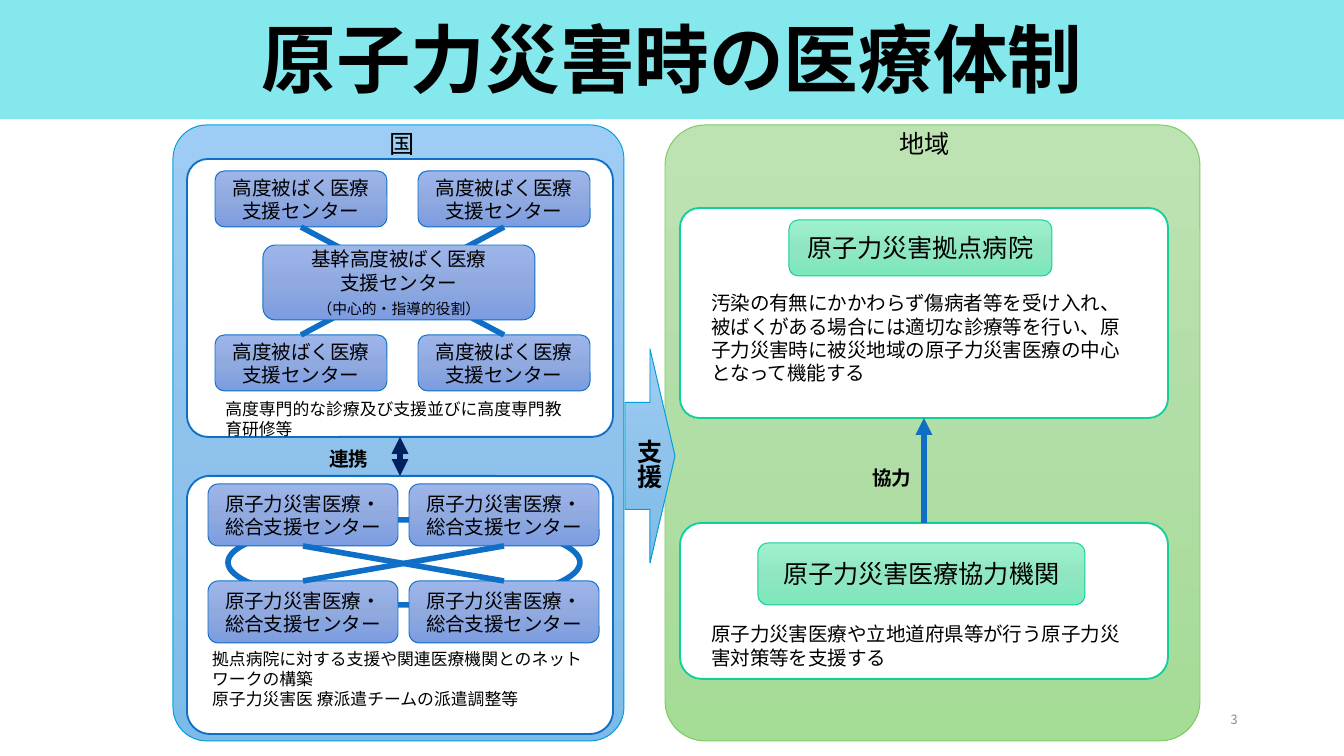
from copy import deepcopy
from itertools import product

from lxml import etree
from pptx import Presentation
from pptx.dml.color import RGBColor
from pptx.enum.shapes import MSO_CONNECTOR, MSO_SHAPE
from pptx.enum.text import MSO_ANCHOR, MSO_AUTO_SIZE, PP_ALIGN
from pptx.oxml.ns import qn
from pptx.util import Emu, Pt

RECT = MSO_SHAPE.RECTANGLE
ROUND = MSO_SHAPE.ROUNDED_RECTANGLE
OVAL = MSO_SHAPE.OVAL
ARROW = MSO_SHAPE.RIGHT_ARROW
STRAIGHT = MSO_CONNECTOR.STRAIGHT
MIDDLE = MSO_ANCHOR.MIDDLE
LEFT, CENTER, RIGHT = PP_ALIGN.LEFT, PP_ALIGN.CENTER, PP_ALIGN.RIGHT
TOP, BOTTOM = 0, 2

FONT = "Noto Sans CJK JP"
LINE_RATIO = 1.19
BLUE, SKY, GREEN, MINT, NAVY = "0F6FC6", "009DD9", "7CCA62", "10CF9B", "002060"
SKY_FILL = ("9DCDF4", "90C3EC", "7CBBE9")
GREEN_FILL = ("BDE3B3", "B1DDA6", "A5DC96")
BLUE_FILL = ("9EB5EA", "90AAE0", "7C9CE1")
MINT_FILL = ("9EF1CD", "91E6C2", "7CE8BC")


def px(n):
    return Emu(round(n * 914400 / 134.4))


def color(hex_code):
    return RGBColor.from_string(hex_code)


def format_run(r, size, bold=False, ink="000000"):
    for name, value in {"name": FONT, "size": Pt(size), "bold": bold}.items():
        setattr(r.font, name, value)
    r.font.color.rgb = color(ink)
    ea = etree.SubElement(r.font._element, qn("a:ea"))
    ea.set("typeface", FONT)


def write(tf, lines, size, align=LEFT, spacing=None, **run_format):
    for i, line in enumerate(lines):
        p = tf.add_paragraph() if i else tf.paragraphs[0]
        p.alignment = align
        p.line_spacing = spacing or Pt(round(size * LINE_RATIO, 1))
        r = p.add_run()
        r.text = line
        format_run(r, size, **run_format)


def fill_gradient(sp, stops):
    sp.fill.gradient()
    sp.fill.gradient_angle = 270
    gs_list = sp._element.spPr.find(".//" + qn("a:gsLst"))
    gs_list.insert(1, deepcopy(gs_list[0]))
    for stop, position, hex_code in zip(sp.fill.gradient_stops, (0, 0.5, 1), stops):
        stop.color.rgb = color(hex_code)
        stop.position = position


def add_shape(s, kind, box, fill=None, line=None, width=0.5, adj=None):
    sp = s.shapes.add_shape(kind, *map(px, box))
    sp.shadow.inherit = False
    if isinstance(fill, tuple):
        fill_gradient(sp, fill)
    elif fill:
        sp.fill.solid()
        sp.fill.fore_color.rgb = color(fill)
    else:
        sp.fill.background()
    if line:
        sp.line.color.rgb = color(line)
        sp.line.width = Pt(width)
    else:
        sp.line.fill.background()
    if adj:
        sp.adjustments[0] = adj
    return sp


def add_panel(s, box, line, adj):
    return add_shape(s, ROUND, box, "FFFFFF", line, 1, adj)


def add_label(s, box, lines, fill=BLUE_FILL, line=BLUE, size=10.5):
    sp = add_shape(s, ROUND, box, fill, line)
    sp.text_frame.vertical_anchor = MIDDLE
    write(sp.text_frame, lines, size, CENTER)
    return sp


def add_label_grid(s, xs, ys, size, lines):
    return [add_label(s, (x, y, *size), lines) for y, x in product(ys, xs)]


def add_text(s, box, lines, size, wrap=True, **text_format):
    tf = s.shapes.add_textbox(*map(px, box)).text_frame
    tf.word_wrap = wrap
    write(tf, lines, size, **text_format)
    return tf


def join(s, start, start_side, end, end_side, line=BLUE, ends=()):
    c = s.shapes.add_connector(STRAIGHT, 0, 0, 0, 0)
    c.begin_connect(start, start_side)
    c.end_connect(end, end_side)
    c.line.color.rgb = color(line)
    c.line.width = Pt(3)
    ln = c.line._get_or_add_ln()
    for end_name in ends:
        etree.SubElement(ln, qn(f"a:{end_name}")).set("type", "triangle")
    etree.SubElement(c._element.spPr, qn("a:effectLst"))


def cross(s, labels):
    upper_left, upper_right, lower_left, lower_right = labels
    join(s, upper_right, BOTTOM, lower_left, TOP)
    join(s, upper_left, BOTTOM, lower_right, TOP)


def add_title(s):
    band = add_shape(s, RECT, (0, 0, 1344, 119), "85E8EC")
    s.shapes._spTree.insert(2, band._element)
    title = s.shapes.title
    title.left, title.top, title.width, title.height = map(px, (93, 20, 1158, 86))
    tf = title.text_frame
    tf.auto_size = MSO_AUTO_SIZE.NONE
    tf.vertical_anchor = MIDDLE
    write(tf, ["原子力災害時の医療体制"], 40, CENTER, 0.9, bold=True)


def add_nation(s):
    add_shape(s, ROUND, (173, 125, 451, 616), SKY_FILL, SKY, adj=0.075)
    advanced = add_panel(s, (187, 159, 426, 278), BLUE, 0.075)
    centers = add_label_grid(s, (215, 418), (171, 335), (172, 56),
                             ["高度被ばく医療", "支援センター"])
    cross(s, centers)
    core = add_label(s, (263, 245, 272, 75), ["基幹高度被ばく医療", "支援センター"])
    p = core.text_frame.paragraphs[-1]
    p.add_line_break()
    r = p.add_run()
    r.text = "（中心的・指導的役割）"
    format_run(r, 7.9)
    add_text(s, (212, 392, 375, 54),
             ["高度専門的な診療及び支援並びに高度専門教育研修等"], 9)

    general = add_panel(s, (187, 476, 426, 258), BLUE, 0.089)
    add_shape(s, OVAL, (228, 520, 352, 85), line=BLUE, width=3)
    cross(s, add_label_grid(s, (208, 409), (484, 581), (190, 62),
                            ["原子力災害医療・", "総合支援センター"]))
    add_text(s, (199, 642, 401, 75),
             ["拠点病院に対する支援や関連医療機関とのネットワークの構築",
              "原子力災害医 療派遣チームの派遣調整等"], 9)
    add_text(s, (376, 122, 52, 44), ["国"], 13.5, wrap=False)
    join(s, advanced, BOTTOM, general, TOP, NAVY, ("headEnd", "tailEnd"))
    add_text(s, (316, 441, 74, 38), ["連携"], 10.5, bold=True)


def add_region(s):
    add_shape(s, ROUND, (665, 125, 535, 616), GREEN_FILL, GREEN, adj=0.075)
    add_text(s, (886, 122, 78, 44), ["地域"], 13.5, wrap=False)
    hospital = add_panel(s, (680, 208, 488, 210), MINT, 0.092)
    add_label(s, (789, 220, 263, 56), ["原子力災害拠点病院"], MINT_FILL, MINT, 13.5)
    add_text(s, (698, 285, 441, 109),
             ["汚染の有無にかかわらず傷病者等を受け入れ、被ばくがある場合には適切な診療等を行い、"
              "原子力災害時に被災地域の原子力災害医療の中心となって機能する"], 10.5)
    partner = add_panel(s, (680, 523, 488, 156), MINT, 0.139)
    add_label(s, (758, 543, 327, 62), ["原子力災害医療協力機関"], MINT_FILL, MINT, 13.5)
    add_text(s, (698, 616, 441, 60),
             ["原子力災害医療や立地道府県等が行う原子力災害対策等を支援する"], 10.5)
    join(s, partner, TOP, hospital, BOTTOM, ends=("tailEnd",))
    add_text(s, (859, 460, 67, 38), ["協力"], 10.5, wrap=False, bold=True)


def add_support(s):
    add_shape(s, ARROW, (625, 349, 50, 214), SKY_FILL, SKY)
    tf = add_text(s, (613, 426, 58, 64), ["支援"], 13.5, wrap=False, bold=True)
    tf._txBody.bodyPr.set("vert", "eaVert")


def main():
    prs = Presentation()
    prs.slide_width, prs.slide_height = px(1344), px(756)
    s = prs.slides.add_slide(prs.slide_layouts[5])
    add_title(s)
    add_nation(s)
    add_region(s)
    add_support(s)
    tf = add_text(s, (949, 700, 302, 40), ["3"], 6.8, align=RIGHT, ink="8C8C8C")
    tf.vertical_anchor = MIDDLE
    prs.save("out.pptx")


if __name__ == "__main__":
    main()
